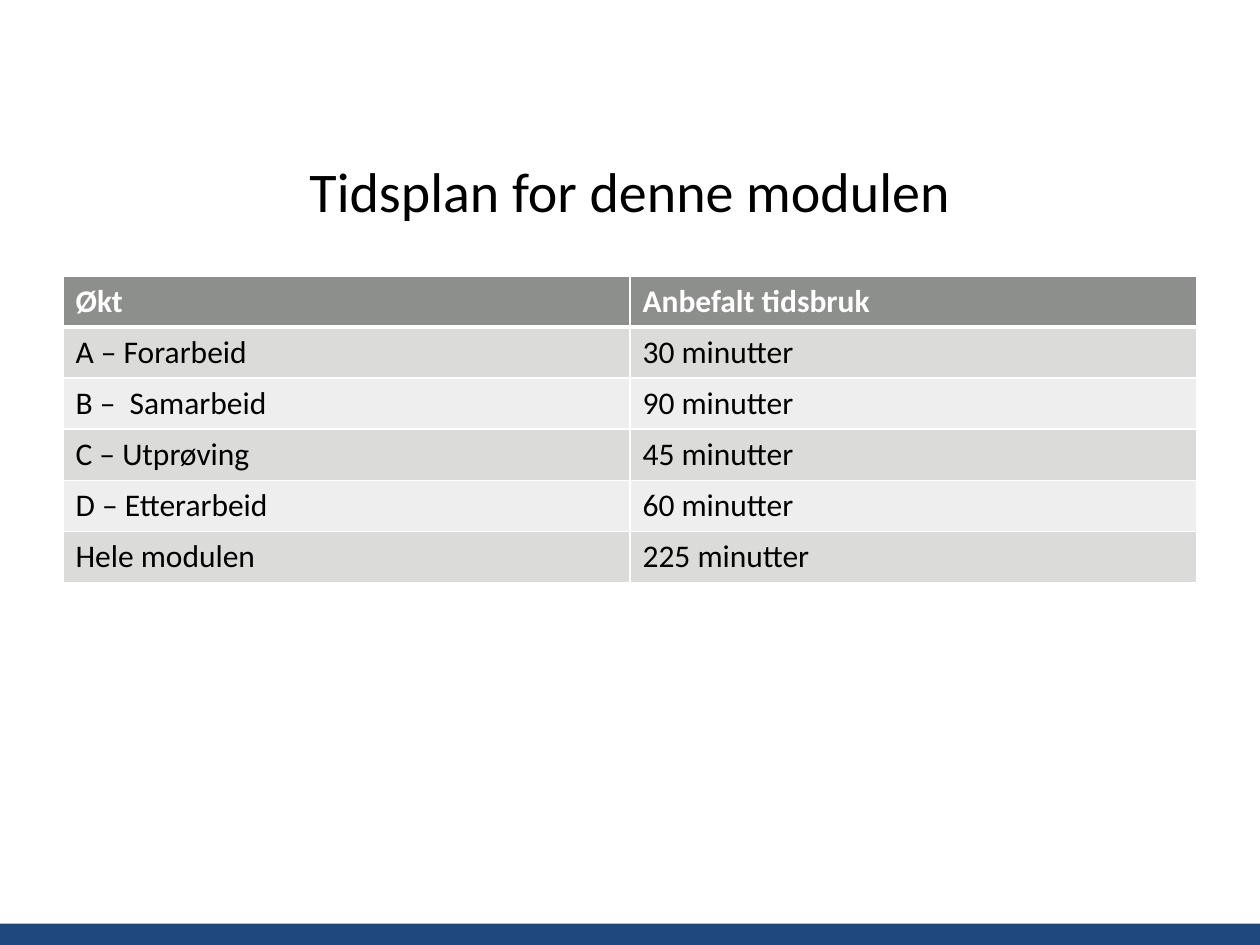
from lxml.etree import SubElement
from pptx import Presentation
from pptx.dml.color import RGBColor
from pptx.enum.shapes import MSO_SHAPE
from pptx.enum.text import MSO_ANCHOR, PP_ALIGN
from pptx.oxml.ns import qn
from pptx.util import Inches, Pt

# Content
TITLE = "Tidsplan for denne modulen"
SCHEDULE = [
    ("Økt", "Anbefalt tidsbruk"),
    ("A – Forarbeid", "30 minutter"),
    ("B –  Samarbeid", "90 minutter"),
    ("C – Utprøving", "45 minutter"),
    ("D – Etterarbeid", "60 minutter"),
    ("Hele modulen", "225 minutter"),
]

THEME = {
    "font": "Calibri",
    "title_size": 32,
    "table_size": 18,
    "text": "000000",
    "header_text": "FFFFFF",
    "header_fill": "8D8F8C",
    "band_fills": ("EEEEEE", "DBDBDA"),
    "border": "FFFFFF",
    "footer": "1F487E",
}
SLIDE_W, SLIDE_H = 10, 7.5
MARGIN = 0.5
CONTENT_W = SLIDE_W - 2 * MARGIN
TABLE_TOP, TABLE_H = 2.19, 2.43
FOOTER_H = 0.17


def style_font(paragraph, size, color, bold=False):
    font = paragraph.font
    font.name = THEME["font"]
    font.size = Pt(size)
    font.bold = bold
    font.color.rgb = RGBColor.from_string(color)


def add_borders(cell, top, bottom):
    properties = cell._tc.get_or_add_tcPr()
    for side, width in (("L", 1), ("R", 1), ("T", top), ("B", bottom)):
        line = SubElement(properties, qn(f"a:ln{side}"), w=str(Pt(width)))
        fill = SubElement(line, qn("a:solidFill"))
        SubElement(fill, qn("a:srgbClr"), val=THEME["border"])


presentation = Presentation()
presentation.slide_width = Inches(SLIDE_W)
presentation.slide_height = Inches(SLIDE_H)
slide = presentation.slides.add_slide(presentation.slide_layouts[5])

# Footer band
footer = slide.shapes.add_shape(
    MSO_SHAPE.RECTANGLE, 0, Inches(SLIDE_H - FOOTER_H),
    Inches(SLIDE_W), Inches(FOOTER_H))
footer.shadow.inherit = False
footer.fill.solid()
footer.fill.fore_color.rgb = RGBColor.from_string(THEME["footer"])
footer.line.fill.background()

# Title
title = slide.shapes.title
title.left, title.top = Inches(MARGIN), Inches(1)
title.width, title.height = Inches(CONTENT_W), Inches(1.01)
title.text_frame.text = TITLE
title.text_frame.vertical_anchor = MSO_ANCHOR.MIDDLE
heading = title.text_frame.paragraphs[0]
heading.alignment = PP_ALIGN.CENTER
style_font(heading, THEME["title_size"], THEME["text"])

# Schedule table
schedule = slide.shapes.add_table(
    len(SCHEDULE), len(SCHEDULE[0]), Inches(MARGIN), Inches(TABLE_TOP),
    Inches(CONTENT_W), Inches(TABLE_H)).table
for row, entries in enumerate(SCHEDULE):
    is_header = row == 0
    fill = THEME["header_fill"] if is_header else THEME["band_fills"][row % 2]
    color = THEME["header_text"] if is_header else THEME["text"]
    for column, entry in enumerate(entries):
        cell = schedule.cell(row, column)
        cell.text = entry
        style_font(cell.text_frame.paragraphs[0], THEME["table_size"], color, is_header)
        add_borders(cell, top=3 if row == 1 else 1, bottom=3 if is_header else 1)
        cell.fill.solid()
        cell.fill.fore_color.rgb = RGBColor.from_string(fill)

presentation.save("out.pptx")
